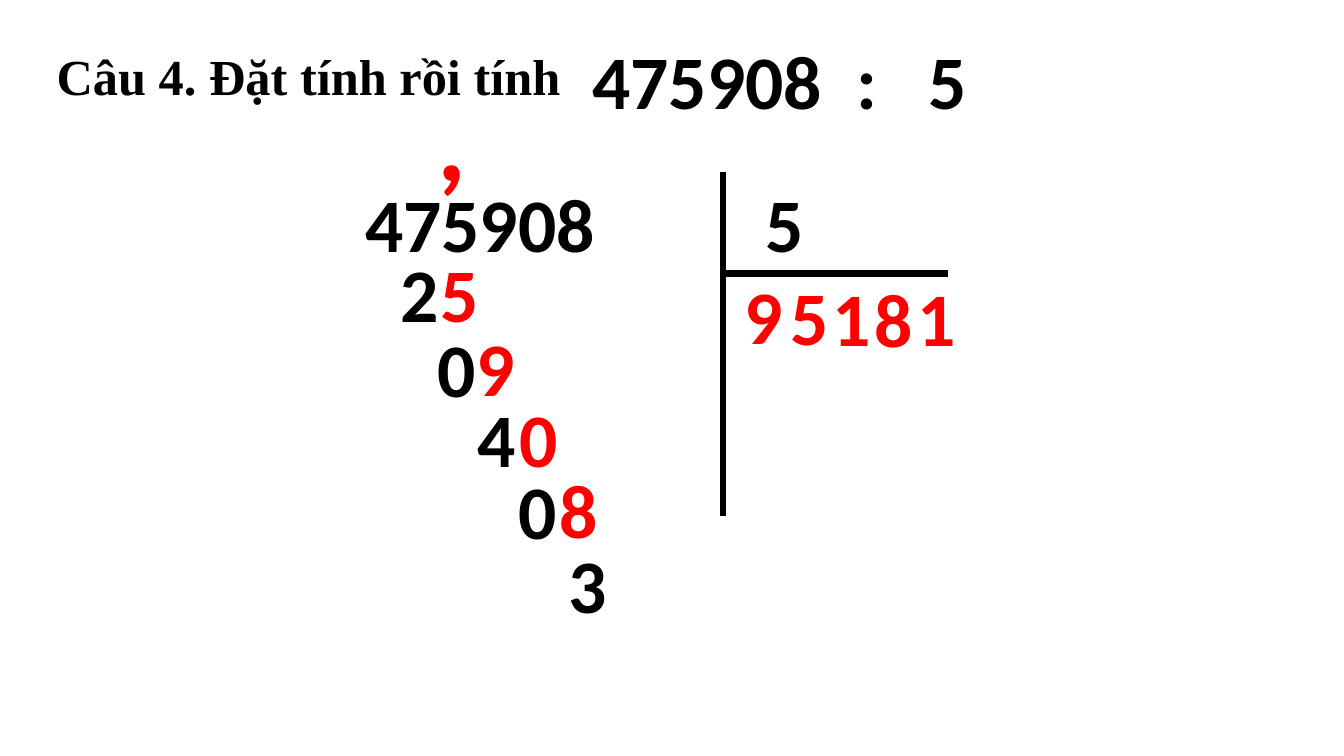
"""Build a slide that works through the long division 475908 : 5."""
from dataclasses import dataclass

import pptx
import pptx.dml.color
import pptx.enum.shapes
import pptx.enum.text
import pptx.oxml.ns
import pptx.util
from lxml import etree
from pptx.shapes.base import BaseShape
from pptx.shapes.shapetree import _BaseGroupShapes
from pptx.slide import Slide
from pptx.util import Cm

BLACK = pptx.dml.color.RGBColor(0, 0, 0)
RED = pptx.dml.color.RGBColor(255, 0, 0)
DIGIT_WIDTH = 1.65
LINE_HEIGHT = 2.57


@dataclass(frozen=True)
class Label:
    """Text box with its place in centimetres and its format."""
    text: str
    left: float
    top: float
    color: pptx.dml.color.RGBColor = BLACK
    width: float = DIGIT_WIDTH
    height: float = LINE_HEIGHT
    size: int = 54
    tabs: tuple[float, ...] = ()


@dataclass(frozen=True)
class Rule:
    """Straight line of the division bracket, in centimetres."""
    start: tuple[float, float]
    end: tuple[float, float]


THIRD_REMAINDER = Label("4", 11.79, 9.75)
EXPRESSION = Label("475908\t:\t5", 14.68, 0.74, width=10.46, tabs=(6.66, 8.48))
DIVISION = Label("475908\t5", 8.95, 4.33, width=12.7, tabs=(10.1,))
RULES = (
    Rule((18.26, 6.89), (23.9, 6.89)),
    Rule((18.22, 4.33), (18.22, 13)),
)
WORKING = (
    Label(",", 10.77, 1.63, RED, height=3.68, size=80),
    Label("9", 18.51, 6.65, RED),
    Label("2", 9.84, 6.1),
    Label("5", 10.85, 6.1, RED),
    Label("5", 19.66, 6.68, RED),
    Label("0", 10.78, 7.98),
    Label("9", 11.76, 7.95, RED),
    Label("1", 20.73, 6.71, RED),
    Label("3", 14.07, 13.44),
    Label("0", 12.84, 9.75, RED),
    Label("8", 21.79, 6.73, RED),
    Label("0", 12.83, 11.56),
    Label("8", 13.84, 11.53, RED),
    Label("1", 22.87, 6.71, RED),
)


def write_text(shape: BaseShape, text: str, *, font: str = "Calibri", size: int = 54,
               color: pptx.dml.color.RGBColor = BLACK, tabs: tuple[float, ...] = (),
               line_spacing: float = 1.0,
               anchor: pptx.enum.text.MSO_ANCHOR = pptx.enum.text.MSO_ANCHOR.TOP) -> None:
    """Write one bold left-aligned paragraph into a shape."""
    frame = shape.text_frame
    frame.word_wrap = True
    frame.auto_size = pptx.enum.text.MSO_AUTO_SIZE.NONE
    frame.vertical_anchor = anchor
    paragraph = frame.paragraphs[0]
    paragraph.alignment = pptx.enum.text.PP_ALIGN.LEFT
    paragraph.line_spacing = line_spacing
    run = paragraph.add_run()
    run.text = text
    run.font.name = font
    run.font.size = pptx.util.Pt(size)
    run.font.bold = True
    run.font.color.rgb = color
    if tabs:
        properties = paragraph._p.get_or_add_pPr()
        tab_list = etree.SubElement(properties, pptx.oxml.ns.qn("a:tabLst"))
        for position in tabs:
            etree.SubElement(tab_list, pptx.oxml.ns.qn("a:tab"),
                             pos=str(int(Cm(position))), algn="l")


def add_title(slide: Slide) -> None:
    """Place and format the title."""
    title = slide.shapes.title
    title.left, title.top, title.width, title.height = Cm(1.17), Cm(0.81), Cm(13.82), Cm(2.36)
    write_text(title, "Câu 4. Đặt tính rồi tính", font="Times New Roman", size=36,
               line_spacing=0.9, anchor=pptx.enum.text.MSO_ANCHOR.MIDDLE)


def add_label(shapes: _BaseGroupShapes, label: Label) -> None:
    """Draw one label."""
    box = shapes.add_textbox(Cm(label.left), Cm(label.top), Cm(label.width), Cm(label.height))
    write_text(box, label.text, size=label.size, color=label.color, tabs=label.tabs)


def add_rule(shapes: _BaseGroupShapes, rule: Rule) -> None:
    """Draw one line of the division bracket."""
    line = shapes.add_connector(
        pptx.enum.shapes.MSO_CONNECTOR.STRAIGHT,
        *(Cm(value) for value in rule.start + rule.end))
    line.line.color.rgb = BLACK
    line.line.width = pptx.util.Pt(4.5)
    etree.SubElement(line._element.spPr, pptx.oxml.ns.qn("a:effectLst"))


def main() -> None:
    """Build and save the presentation."""
    presentation = pptx.Presentation()
    presentation.slide_width, presentation.slide_height = Cm(33.87), Cm(19.05)
    slide = presentation.slides.add_slide(presentation.slide_layouts[5])
    add_title(slide)
    for label in (THIRD_REMAINDER, EXPRESSION):
        add_label(slide.shapes, label)
    bracket = slide.shapes.add_group_shape().shapes
    add_label(bracket, DIVISION)
    for rule in RULES:
        add_rule(bracket, rule)
    for label in WORKING:
        add_label(slide.shapes, label)
    presentation.save("out.pptx")


if __name__ == "__main__":
    main()
